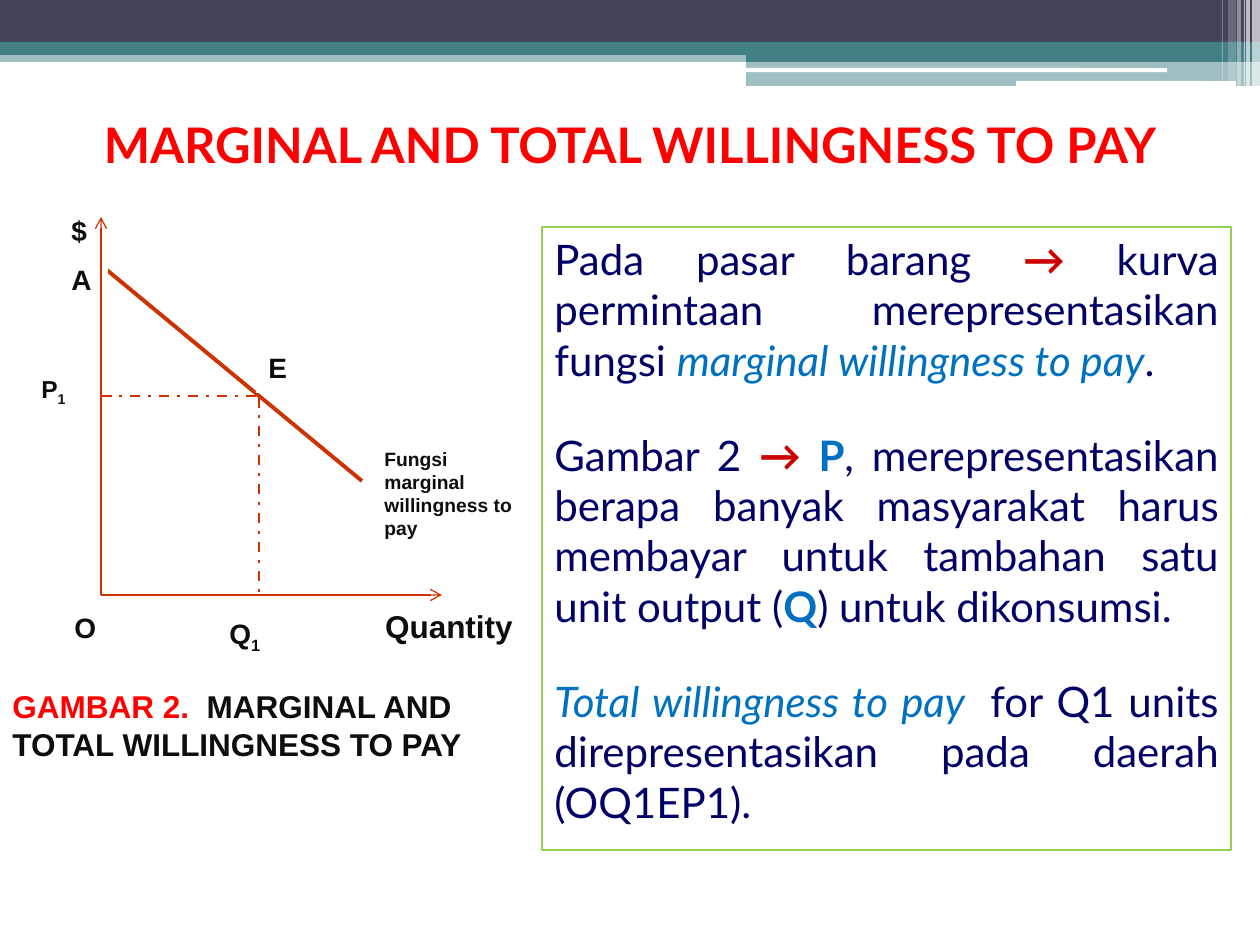
from lxml import etree
from pptx import Presentation, util as u
from pptx.dml.color import RGBColor
from pptx.enum import dml, shapes, text
from pptx.oxml.ns import qn

PX = 914400 / 126
NAVY = RGBColor(0x42, 0x44, 0x56)
TEAL = RGBColor(0x43, 0x80, 0x86)
WHITE = RGBColor(0xFF, 0xFF, 0xFF)
RED = RGBColor(0xFF, 0x00, 0x00)
INK = RGBColor(0x0D, 0x0D, 0x0D)
RUST = RGBColor(0xCC, 0x33, 0x00)
GREEN = RGBColor(0x92, 0xD0, 0x50)
DEEP_BLUE = RGBColor(0x00, 0x00, 0x66)
BLUE = RGBColor(0x00, 0x70, 0xC0)
CRIMSON = RGBColor(0xCC, 0x00, 0x00)
RECT = shapes.MSO_SHAPE.RECTANGLE
ROUND = shapes.MSO_SHAPE.ROUNDED_RECTANGLE

prs = Presentation()
prs.slide_width, prs.slide_height = u.Inches(10), u.Inches(7.5)
slide = prs.slides.add_slide(prs.slide_layouts[6])


def add_bar(kind, box, color, opacity=100):
    bar = slide.shapes.add_shape(kind, *[u.Emu(round(v * PX)) for v in box])
    bar.shadow.inherit = False
    bar.line.fill.background()
    bar.fill.solid()
    bar.fill.fore_color.rgb = color
    if opacity < 100:
        rgb = bar.fill._xPr.find(qn("a:solidFill"))[0]
        etree.SubElement(rgb, qn("a:alpha"), val=str(opacity * 1000))


def add_words(box, paragraphs, size, font="Arial", bold=True,
              align=text.PP_ALIGN.LEFT, gap=0):
    """Each paragraph is a list of (words, colour, style) runs."""
    words_box = slide.shapes.add_textbox(*[u.Emu(round(v * PX)) for v in box])
    frame = words_box.text_frame
    frame.word_wrap = True
    for i, runs in enumerate(paragraphs):
        para = frame.add_paragraph() if i else frame.paragraphs[0]
        para.alignment = align
        para.space_before = u.Pt(gap if i else 0)
        para.font.name, para.font.size, para.font.bold = font, u.Pt(size), bold
        for words, color, style in runs:
            run = para.add_run()
            run.text = words
            run.font.color.rgb = color
            if style == "bold":
                run.font.bold = True
            elif style == "italic":
                run.font.italic = True
            elif style == "sub":
                run.font._element.set("baseline", "-25000")
    return words_box


# Header bands
add_bar(RECT, (0, 50, 1260, 12), TEAL, 50)
add_bar(RECT, (0, 0, 1260, 43), NAVY)
add_bar(RECT, (0, 42, 1260, 13), TEAL)
add_bar(RECT, (746, 49, 514, 13), TEAL)
add_bar(RECT, (746, 62, 514, 24), TEAL, 50)
add_bar(ROUND, (745, 68, 422, 4), WHITE)
add_bar(ROUND, (1016, 81, 220, 5), WHITE)

# Thin stripes at the right edge of the header
for x, width, height, opacity in [(1252, 8, 86, 65), (1246, 4, 86, 65),
                                  (1244, 1, 86, 60), (1237, 4, 86, 40),
                                  (1228, 8, 81, 20), (1222, 1, 81, 30)]:
    add_bar(RECT, (x, 0, width, height), WHITE, opacity)

# Figure caption and axis title
caption = add_words((0, 689, 601, 72),
                    [[("GAMBAR 2.  ", RED, ""), ("MARGINAL AND ", INK, "")]], 18)
caption.text_frame.vertical_anchor = text.MSO_ANCHOR.MIDDLE
caption_para = caption.text_frame.paragraphs[0]
caption_para.add_line_break()
caption_end = caption_para.add_run()
caption_end.text = "TOTAL WILLINGNESS TO PAY"
caption_end.font.color.rgb = INK
add_words((335, 601, 228, 50), [[("Quantity", INK, "")]], 18,
          align=text.PP_ALIGN.CENTER)

# Diagram lines: demand curve, guides to E, then the axes
ORIGIN = (101, 595)
diagram_lines = [((102, 266), (362, 481), 2.25, "solid"),
                 ((101, 396), (258, 396), 1.5, "dashed"),
                 ((259, 397), (259, 595), 1.5, "dashed"),
                 (ORIGIN, (101, 217), 0.75, "arrow"),
                 (ORIGIN, (442, 595), 0.75, "arrow")]
# Diagram labels: left, top, width, height, words, subscript, size
diagram_labels = [(372, 441, 170, 125, "Fungsi marginal willingness to pay", "", 11),
                  (217, 610, 101, 57, "Q", "1", 16),
                  (59, 207, 49, 78, "$", "", 16),
                  (62, 604, 39, 60, "O", "", 16),
                  (256, 344, 38, 49, "E", "", 16),
                  (29, 368, 63, 66, "P", "1", 14),
                  (59, 256, 38, 49, "A", "", 16)]

for start, end, weight, style in diagram_lines:
    if style == "arrow" and diagram_labels:
        # Labels lie over the curve and guides but under the axes
        for *box, words, subscript, size in diagram_labels:
            runs = [(words, INK, "")]
            if subscript:
                runs.append((subscript, INK, "sub"))
            label = add_words(box, [runs], size)
            label.fill.solid()
            label.fill.fore_color.rgb = WHITE
        diagram_labels = []
    line = slide.shapes.add_connector(
        shapes.MSO_CONNECTOR.STRAIGHT,
        *[u.Emu(round(v * PX)) for v in (*start, *end)])
    line.line.color.rgb = RUST
    line.line.width = u.Pt(weight)
    if style == "dashed":
        line.line.dash_style = dml.MSO_LINE.DASH_DOT
    elif style == "arrow":
        etree.SubElement(line.line._get_or_add_ln(), qn("a:tailEnd"), type="arrow")
    etree.SubElement(line._element.spPr, qn("a:effectLst"))

# Slide title
add_words((0, 108, 1260, 72),
          [[("MARGINAL AND TOTAL WILLINGNESS TO PAY", RED, "")]], 28, "Lato",
          align=text.PP_ALIGN.CENTER)

# Explanation
explanation = [
    [("Pada pasar barang ", DEEP_BLUE, ""), ("→ ", CRIMSON, "bold"),
     ("kurva permintaan merepresentasikan fungsi ", DEEP_BLUE, ""),
     ("marginal willingness to pay", BLUE, "italic"), (".", DEEP_BLUE, "")],
    [("Gambar 2 ", DEEP_BLUE, ""), ("→ ", CRIMSON, "bold"), ("P", BLUE, "bold"),
     (", merepresentasikan berapa banyak masyarakat harus membayar untuk "
      "tambahan satu unit output (", DEEP_BLUE, ""),
     ("Q", BLUE, "bold"), (") untuk dikonsumsi. ", DEEP_BLUE, "")],
    [("Total willingness to pay  ", BLUE, "italic"),
     ("for Q1 units direpresentasikan pada daerah (OQ1EP1). ", DEEP_BLUE, "")],
]
panel = add_words((542, 227, 689, 623), explanation, 24, "Lato", False,
                  text.PP_ALIGN.JUSTIFY, gap=25.5)
panel.line.color.rgb = GREEN
panel.line.width = u.Pt(0.75)

prs.save("out.pptx")
